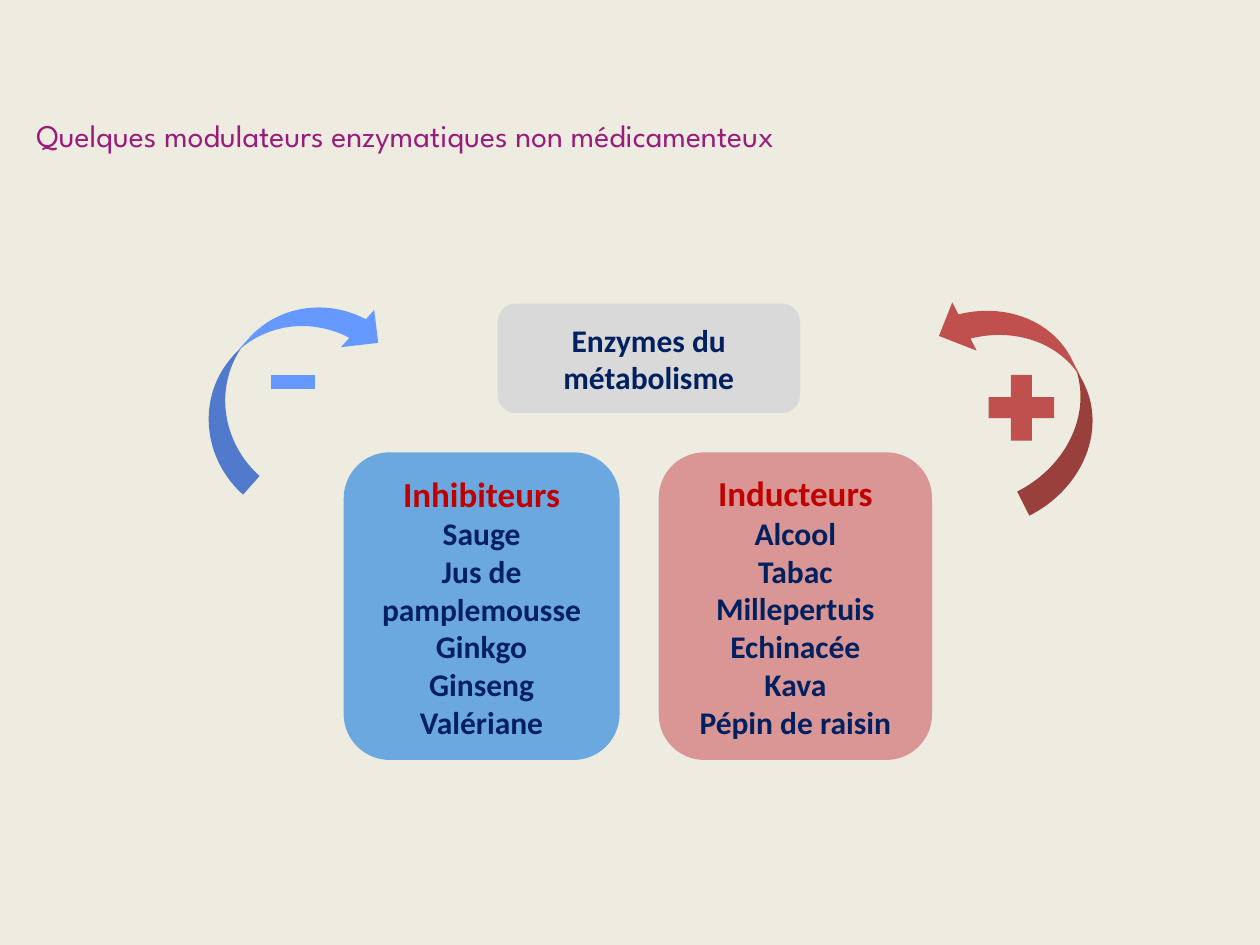
"""Build a slide on non-drug enzyme modulators."""
from dataclasses import dataclass

from pptx import Presentation
from pptx.dml.color import RGBColor
from pptx.enum.shapes import MSO_SHAPE as Kind
from pptx.enum.text import MSO_ANCHOR as Anchor, MSO_AUTO_SIZE as Fit, PP_ALIGN as Align
from pptx.oxml.ns import qn
from pptx.shapes.autoshape import Shape
from pptx.slide import Slide
from pptx.util import Cm, Pt

CREAM = RGBColor(0xEE, 0xEC, 0xE1)
PLUM = RGBColor(0x9A, 0x1B, 0x7B)
GREY = RGBColor(0xD9, 0xD9, 0xD9)
NAVY = RGBColor(0x00, 0x20, 0x60)
RED = RGBColor(0xC0, 0x00, 0x00)
AZURE = RGBColor(0x66, 0x99, 0xFF)
BRICK = RGBColor(0xC0, 0x50, 0x4D)
SKY = RGBColor(0x6C, 0xA8, 0xE0)
ROSE = RGBColor(0xD9, 0x96, 0x94)


@dataclass(frozen=True)
class Line:
    text: str
    size: int = 18
    color: RGBColor = NAVY
    font: str = "Calibri"
    bold: bool = True


@dataclass(frozen=True)
class Form:
    kind: Kind
    box: tuple[float, float, float, float]
    fill: RGBColor
    turn: float = 0
    flip: bool = False
    lines: tuple[Line, ...] = ()
    anchor: Anchor = Anchor.MIDDLE


def place(shape: Shape, box: tuple[float, float, float, float]) -> None:
    shape.left, shape.top, shape.width, shape.height = map(Cm, box)


def write(shape: Shape, lines: tuple[Line, ...], align: Align, anchor: Anchor) -> None:
    frame = shape.text_frame
    frame.word_wrap = True
    frame.auto_size = Fit.NONE
    frame.vertical_anchor = anchor
    for i, line in enumerate(lines):
        para = frame.add_paragraph() if i else frame.paragraphs[0]
        para.alignment = align
        run = para.add_run()
        run.text = line.text
        font = run.font
        font.name, font.size, font.bold = line.font, Pt(line.size), line.bold
        font.color.rgb = line.color


def draw(slide: Slide, form: Form) -> None:
    shape = slide.shapes.add_shape(form.kind, *map(Cm, form.box))
    shape.shadow.inherit = False
    shape.fill.solid()
    shape.fill.fore_color.rgb = form.fill
    shape.line.fill.background()
    shape.rotation = form.turn
    if form.flip:
        shape.element.spPr.find(qn("a:xfrm")).set("flipV", "1")
    if form.lines:
        write(shape, form.lines, Align.CENTER, form.anchor)


def panel(left: float, width: float, fill: RGBColor, head: str, names: list[str]) -> Form:
    lines = (Line(head, 20, RED), *map(Line, names))
    return Form(Kind.ROUNDED_RECTANGLE, (left, 9.12, width, 6.2), fill,
                lines=lines, anchor=Anchor.TOP)


FORMS = (
    Form(Kind.ROUNDED_RECTANGLE, (10.03, 6.12, 6.1, 2.21), GREY,
         lines=(Line("Enzymes du métabolisme"),)),
    Form(Kind.CURVED_DOWN_ARROW, (3.38, 6.58, 4.6, 2.01), AZURE, 311.7),
    panel(6.93, 5.56, SKY, "Inhibiteurs",
          ["Sauge", "Jus de pamplemousse", "Ginkgo", "Ginseng", "Valériane"]),
    Form(Kind.CURVED_DOWN_ARROW, (18.39, 6.76, 4.6, 2.18), BRICK, 243.3, True),
    panel(13.28, 5.51, ROSE, "Inducteurs",
          ["Alcool", "Tabac", "Millepertuis", "Echinacée", "Kava", "Pépin de raisin"]),
    Form(Kind.MATH_MINUS, (5.31, 7.11, 1.19, 1.19), AZURE),
    Form(Kind.MATH_PLUS, (19.69, 7.32, 1.8, 1.8), BRICK),
)


def main() -> None:
    deck = Presentation()
    deck.slide_width, deck.slide_height = Cm(25.4), Cm(19.05)
    slide = deck.slides.add_slide(deck.slide_layouts[5])
    slide.background.fill.solid()
    slide.background.fill.fore_color.rgb = CREAM
    title = slide.shapes.title
    place(title, (0.48, 1.52, 19.2, 2.39))
    head = Line("Quelques modulateurs enzymatiques non médicamenteux",
                18, PLUM, "League Spartan", False)
    write(title, (head,), Align.LEFT, Anchor.MIDDLE)
    for form in FORMS:
        draw(slide, form)
    deck.save("out.pptx")


if __name__ == "__main__":
    main()
